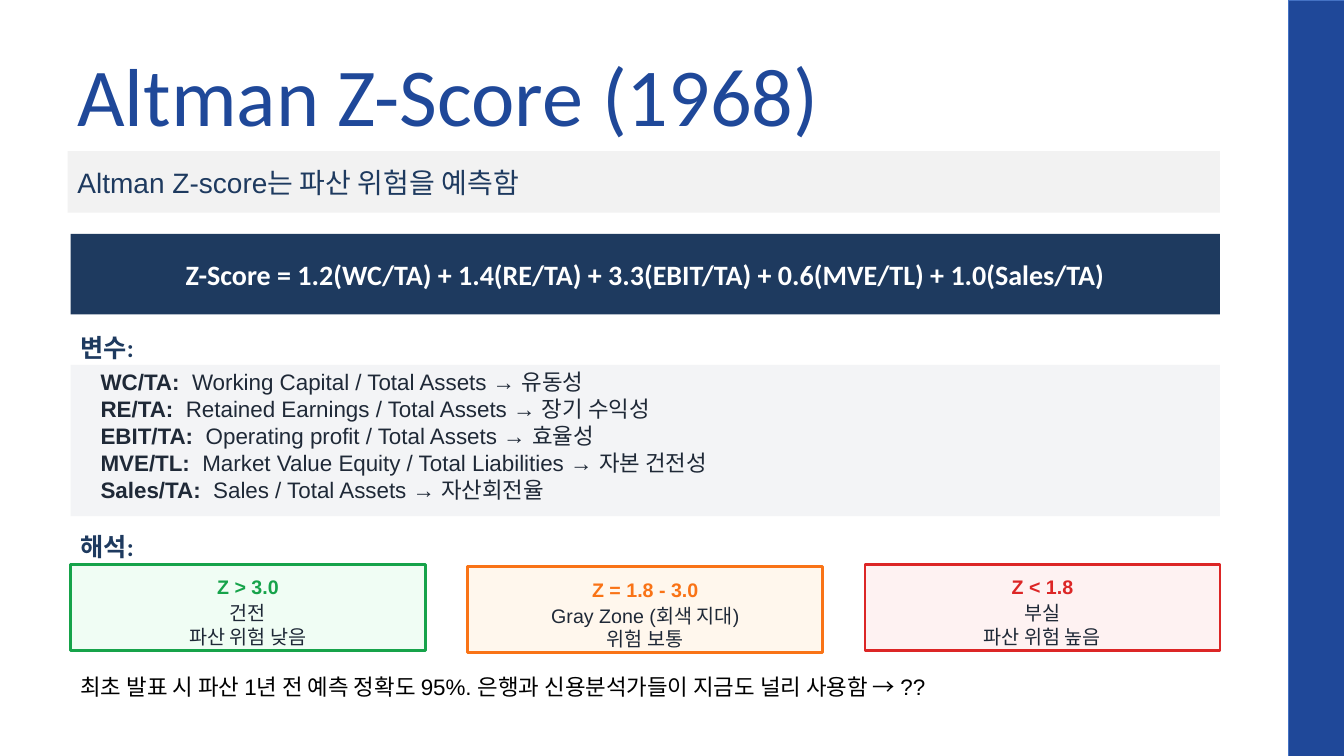
import pptx
import pptx.util
import pptx.dml.color
import pptx.enum.shapes
import pptx.enum.text

COLORS = {
    "blue": "1F4899", "edge": "4472C4", "navy": "1E3A5F", "white": "FFFFFF",
    "band": "F2F2F2", "panel": "F3F4F6", "ink": "1F2937", "black": "000000",
    "green": "16A34A", "green_tint": "F0FDF4",
    "orange": "F97316", "orange_tint": "FFF7ED",
    "red": "DC2626", "red_tint": "FEF2F2",
}
TITLE = "Altman Z-Score (1968)"
SUMMARY = "Altman Z-score는 파산 위험을 예측함"
FORMULA = "Z-Score = 1.2(WC/TA) + 1.4(RE/TA) + 3.3(EBIT/TA) + 0.6(MVE/TL) + 1.0(Sales/TA)"
HEADINGS = [("변수:", 3.27), ("해석:", 5.25)]
VARIABLES = [
    ("WC/TA: ", " Working Capital / Total Assets → 유동성"),
    ("RE/TA: ", " Retained Earnings / Total Assets → 장기 수익성"),
    ("EBIT/TA: ", " Operating profit / Total Assets → 효율성"),
    ("MVE/TL: ", " Market Value Equity / Total Liabilities → 자본 건전성"),
    ("Sales/TA: ", " Sales / Total Assets → 자산회전율"),
]
ZONES = [
    ("Z > 3.0", ["건전", "파산 위험 낮음"], "green", 5.6),
    ("Z = 1.8 - 3.0", ["Gray Zone (회색 지대)", "위험 보통"], "orange", 5.62),
    ("Z < 1.8", ["부실", "파산 위험 높음"], "red", 5.6),
]
FOOTNOTE = "최초 발표 시 파산 1년 전 예측 정확도 95%. 은행과 신용분석가들이 지금도 널리 사용함 → ??"

LEFT, WIDTH = 0.7, 11.4
ZONE_WIDTH, ZONE_STEP = 3.52, 3.94


def rgb(name):
    return pptx.dml.color.RGBColor.from_string(COLORS[name])


def add_box(slide, area, fill, line=None, line_width=0.5):
    shape = slide.shapes.add_shape(
        pptx.enum.shapes.MSO_SHAPE.RECTANGLE, *map(pptx.util.Inches, area))
    shape.shadow.inherit = False
    shape.fill.solid()
    shape.fill.fore_color.rgb = rgb(fill)
    if line:
        shape.line.color.rgb = rgb(line)
        shape.line.width = pptx.util.Pt(line_width)
    else:
        shape.line.fill.background()
    return shape


def write(shape, lines, size, color, font="Arial", bold=False, align="LEFT"):
    frame = shape.text_frame
    frame.word_wrap = True
    frame.vertical_anchor = pptx.enum.text.MSO_ANCHOR.MIDDLE
    for index, parts in enumerate(lines):
        paragraph = frame.add_paragraph() if index else frame.paragraphs[0]
        paragraph.alignment = getattr(pptx.enum.text.PP_ALIGN, align)
        for position, text in enumerate(parts):
            run = paragraph.add_run()
            run.text = text
            run.font.name = font
            run.font.size = pptx.util.Pt(size)
            run.font.bold = bold or (len(parts) > 1 and position == 0)
            run.font.color.rgb = rgb(color)


def add_text(slide, area, lines, size, color, **style):
    box = slide.shapes.add_textbox(*map(pptx.util.Inches, area))
    write(box, lines, size, color, **style)


def main():
    """Build the Altman Z-Score slide."""
    presentation = pptx.Presentation()
    presentation.slide_width = pptx.util.Inches(13.33)
    presentation.slide_height = pptx.util.Inches(7.5)
    slide = presentation.slides.add_slide(presentation.slide_layouts[6])

    add_box(slide, (12.78, 0, 0.56, 7.5), "blue", "edge")
    add_text(slide, (0.67, 0.3, 12, 1.25), [[TITLE]], 58.7, "blue", font="Calibri")
    summary = add_box(slide, (0.67, 1.5, 11.43, 0.61), "band")
    write(summary, [[SUMMARY]], 20, "navy")
    formula = add_box(slide, (LEFT, 2.32, WIDTH, 0.8), "navy")
    write(formula, [[FORMULA]], 20, "white", font="Calibri", bold=True, align="CENTER")

    for heading, top in HEADINGS:
        add_text(slide, (LEFT, top, WIDTH, 0.35), [[heading]], 18, "navy",
                 font="Calibri", bold=True)
    add_box(slide, (LEFT, 3.62, WIDTH, 1.5), "panel")
    add_text(slide, (0.9, 3.72, 10.76, 1.2), VARIABLES, 16, "ink")

    for index, (score, meaning, color, top) in enumerate(ZONES):
        left = LEFT + index * ZONE_STEP
        add_box(slide, (left, top, ZONE_WIDTH, 0.85), color + "_tint", color, 2)
        add_text(slide, (left, top + 0.05, ZONE_WIDTH, 0.35), [[score]], 14, color,
                 bold=True, align="CENTER")
        add_text(slide, (left, top + 0.4, ZONE_WIDTH, 0.4),
                 [[line] for line in meaning], 14, "ink", align="CENTER")

    add_text(slide, (LEFT, 6.55, WIDTH, 0.52), [[FOOTNOTE]], 16, "black")
    presentation.save("out.pptx")


if __name__ == "__main__":
    main()
